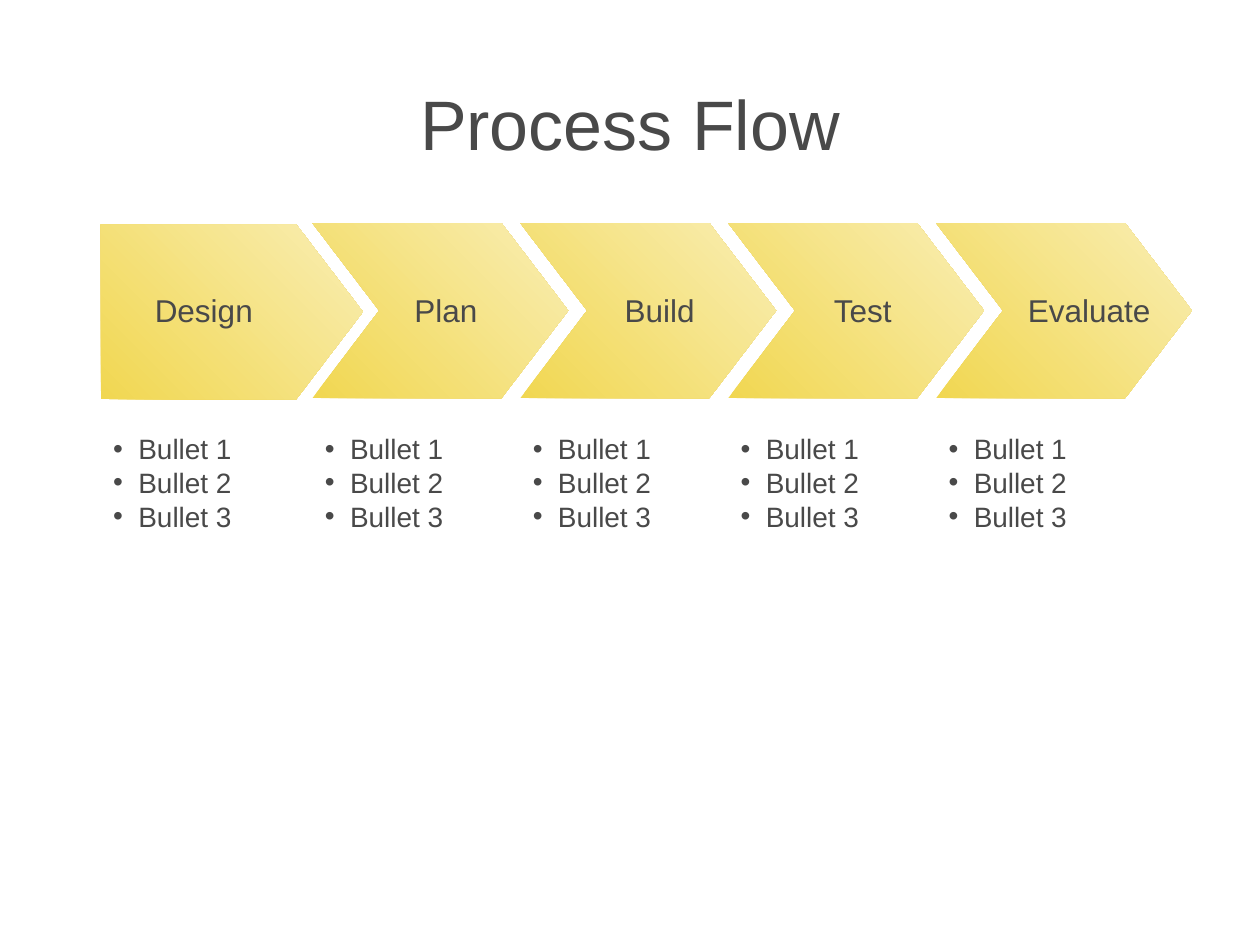
from lxml import etree
from pptx import Presentation
from pptx.dml.color import RGBColor
from pptx.enum.text import MSO_ANCHOR, MSO_AUTO_SIZE, PP_ALIGN
from pptx.oxml.ns import qn
from pptx.util import Inches, Pt

TEXT_GREY = RGBColor(0x49, 0x49, 0x49)
DEEP_YELLOW = RGBColor(0xF1, 0xD7, 0x51)
PALE_YELLOW = RGBColor(0xF9, 0xEE, 0xB4)
FONT = "Arial"

# Label, label left, label width
STEPS = [
    ("Design", 1.13, 0.98),
    ("Plan", 3.19, 0.70),
    ("Build", 4.86, 0.76),
    ("Test", 6.52, 0.69),
    ("Evaluate", 8.06, 1.17),
]
BULLETS = ["Bullet 1", "Bullet 2", "Bullet 3"]
FIRST_LEFT, SECOND_LEFT, PITCH = 0.8, 2.48, 1.65
ARROW_HEIGHT, POINT_DEPTH = 1.39, 0.53


class FlowSlide:
    def __init__(self, deck):
        self.page = deck.slides.add_slide(deck.slide_layouts[6])

    def text(self, lines, left, top, width, height, size, wrap=True):
        box = self.page.shapes.add_textbox(
            Inches(left), Inches(top), Inches(width), Inches(height))
        frame = box.text_frame
        frame.word_wrap = wrap
        frame.text = "\n".join(lines)
        for paragraph in frame.paragraphs:
            paragraph.font.name = FONT
            paragraph.font.size = Pt(size)
            paragraph.font.color.rgb = TEXT_GREY
        return frame

    def title(self, words):
        frame = self.text([words], 0.5, 0.35, 9, 1.25, 40)
        frame.vertical_anchor = MSO_ANCHOR.MIDDLE
        frame.paragraphs[0].alignment = PP_ALIGN.CENTER

    def label(self, words, left, width):
        frame = self.text([words], left, 2.26, width, 0.4, 18, wrap=False)
        frame.auto_size = MSO_AUTO_SIZE.SHAPE_TO_FIT_TEXT

    def bullets(self, lines, left):
        frame = self.text(lines, left, 3.38, 1.51, 2.57, 16)
        for paragraph in frame.paragraphs:
            properties = paragraph._p.get_or_add_pPr()
            properties.set("marL", str(Inches(0.2)))
            properties.set("indent", str(-Inches(0.2)))
            properties.insert(0, etree.Element(qn("a:buFont"), typeface=FONT))
            properties.insert(1, etree.Element(qn("a:buChar"), char="•"))

    def arrow(self, left, top, body, notched):
        middle, bottom = top + ARROW_HEIGHT / 2, top + ARROW_HEIGHT
        shoulder = left + body
        points = [(shoulder, top), (shoulder + POINT_DEPTH, middle),
                  (shoulder, bottom), (left, bottom)]
        if notched:
            points.append((left + POINT_DEPTH, middle))
        builder = self.page.shapes.build_freeform(Inches(left), Inches(top))
        builder.add_line_segments(
            [(Inches(x), Inches(y)) for x, y in points], close=True)
        shape = builder.convert_to_shape()
        shape.shadow.inherit = False
        shape.line.fill.background()
        shape.fill.gradient()
        shape.fill.gradient_angle = 45
        for position, (stop, color) in enumerate(
                zip(shape.fill.gradient_stops, (DEEP_YELLOW, PALE_YELLOW))):
            stop.color.rgb = color
            stop.position = position


def main():
    deck = Presentation()
    deck.slide_width, deck.slide_height = Inches(10), Inches(7.5)
    slide = FlowSlide(deck)
    slide.title("Process Flow")

    # One arrow, label and bullet list per step
    for index, (name, label_left, label_width) in enumerate(STEPS):
        if index == 0:
            left = FIRST_LEFT
            slide.arrow(left, 1.78, 1.55, notched=False)
        else:
            left = SECOND_LEFT + (index - 1) * PITCH
            slide.arrow(left, 1.77, 1.5, notched=True)
        slide.label(name, label_left, label_width)
        slide.bullets(BULLETS, left)

    deck.save("out.pptx")


if __name__ == "__main__":
    main()
